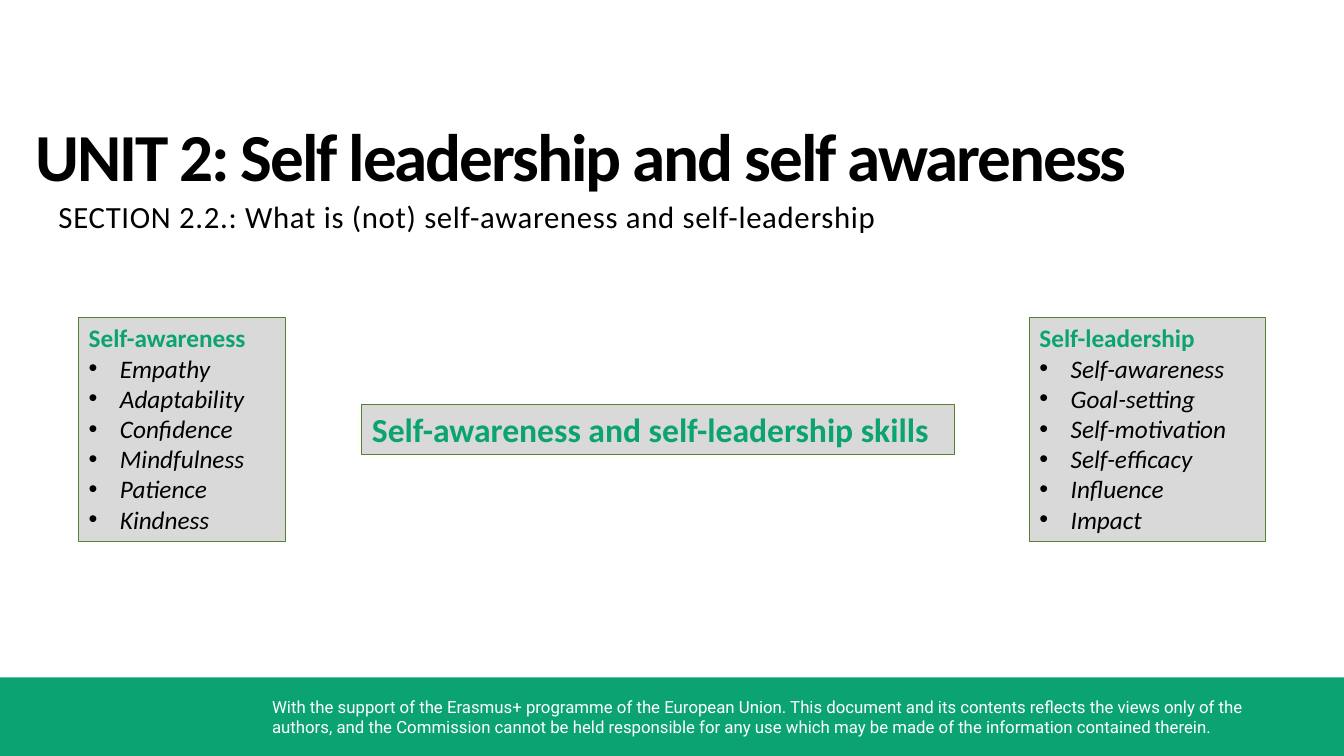
from pptx import Presentation
from pptx import util as u
from pptx.dml import color
from pptx.enum import shapes, text
from lxml import etree

GREEN, GREY, EDGE = "0CA373", "D9D9D9", "548235"
BLACK, WHITE = "000000", "FFFFFF"
NS = "{http://schemas.openxmlformats.org/drawingml/2006/main}"


def paint(fmt, hue):
    if hasattr(fmt, "solid"):
        fmt.solid()
        fmt = fmt.fore_color
    fmt.rgb = color.RGBColor.from_string(hue)


def write(para, words, size, hue, face="Calibri", bold=False, slant=False):
    run = para.add_run()
    run.text = words
    font = run.font
    font.name, font.size = face, u.Pt(size)
    font.bold, font.italic = bold, slant
    paint(font.color, hue)
    return run


deck = Presentation()
deck.slide_width, deck.slide_height = u.Inches(13.33), u.Inches(7.5)
slide = deck.slides.add_slide(deck.slide_layouts[3])
title, left, right = slide.placeholders
rect = shapes.MSO_SHAPE.RECTANGLE

bar = slide.shapes.add_shape(
    rect, 0, u.Inches(6.72), deck.slide_width, u.Inches(0.78))
bar.shadow.inherit = False
paint(bar.fill, GREEN)
bar.line.fill.background()

note = slide.shapes.add_textbox(
    u.Inches(2.6), u.Inches(6.86), u.Inches(10.42), u.Inches(0.5))
note.text_frame.word_wrap = True
write(note.text_frame.paragraphs[0],
      "With the support of the Erasmus+ programme of the European Union. "
      "This document and its contents reflects the views only of the authors, "
      "and the Commission cannot be held responsible for any use which may be "
      "made of the information contained therein.", 12, WHITE, "Roboto")

sub = slide.shapes.add_textbox(0, 0, 0, 0)
heads = [
    (title, (0.35, 1.12, 11.38, 0.82), 0.01,
     "UNIT 2: Self leadership and self awareness", 48, True, -150),
    (sub, (0.58, 1.94, 8.42, 0.39), 0.02,
     "SECTION 2.2.: What is (not) self-awareness and self-leadership",
     22, False, 50),
]
for box, place, pad, words, size, bold, gap in heads:
    box.left, box.top, box.width, box.height = map(u.Inches, place)
    frame = box.text_frame
    frame.word_wrap = True
    frame.auto_size = text.MSO_AUTO_SIZE.NONE
    frame.vertical_anchor = text.MSO_ANCHOR.TOP
    frame.margin_left = frame.margin_right = frame.margin_bottom = 0
    frame.margin_top = u.Inches(pad)
    para = frame.paragraphs[0]
    para.alignment = text.PP_ALIGN.LEFT
    run = write(para, words, size, BLACK, bold=bold)
    run.font._element.set("spc", str(gap))

mid = slide.shapes.add_shape(
    rect, u.Inches(3.59), u.Inches(4.01), u.Inches(5.88), u.Inches(0.5))
mid.shadow.inherit = False
para = mid.text_frame.paragraphs[0]
para.alignment = text.PP_ALIGN.LEFT
write(para, "Self-awareness and self-leadership skills", 24, GREEN, bold=True)

lists = [
    (left, 0.78, 2.05, "Self-awareness",
     ["Empathy", "Adaptability", "Confidence", "Mindfulness", "Patience",
      "Kindness"]),
    (right, 10.21, 2.34, "Self-leadership",
     ["Self-awareness", "Goal-setting", "Self-motivation", "Self-efficacy",
      "Influence", "Impact"]),
]
for box, x, wide, head, skills in lists:
    box.left, box.top = u.Inches(x), u.Inches(3.15)
    box.width, box.height = u.Inches(wide), u.Inches(2.22)
    frame = box.text_frame
    frame.auto_size = text.MSO_AUTO_SIZE.NONE
    for i, words in enumerate([head] + skills):
        para = frame.add_paragraph() if i else frame.paragraphs[0]
        props = para._p.get_or_add_pPr()
        dent = u.Inches(0.31) if i else 0
        props.set("marL", str(dent))
        props.set("indent", str(-dent))
        if i:
            etree.SubElement(props, NS + "buFont", typeface="Arial")
            etree.SubElement(props, NS + "buChar", char="•")
        else:
            etree.SubElement(props, NS + "buNone")
        para.alignment = text.PP_ALIGN.JUSTIFY
        para.space_before = u.Pt(0)
        write(para, words, 18, BLACK if i else GREEN,
              bold=not i, slant=i > 0)

for box in (left, mid, right):
    paint(box.fill, GREY)
    paint(box.line.fill, EDGE)
    box.line.width = u.Pt(0.75)

deck.save("out.pptx")
